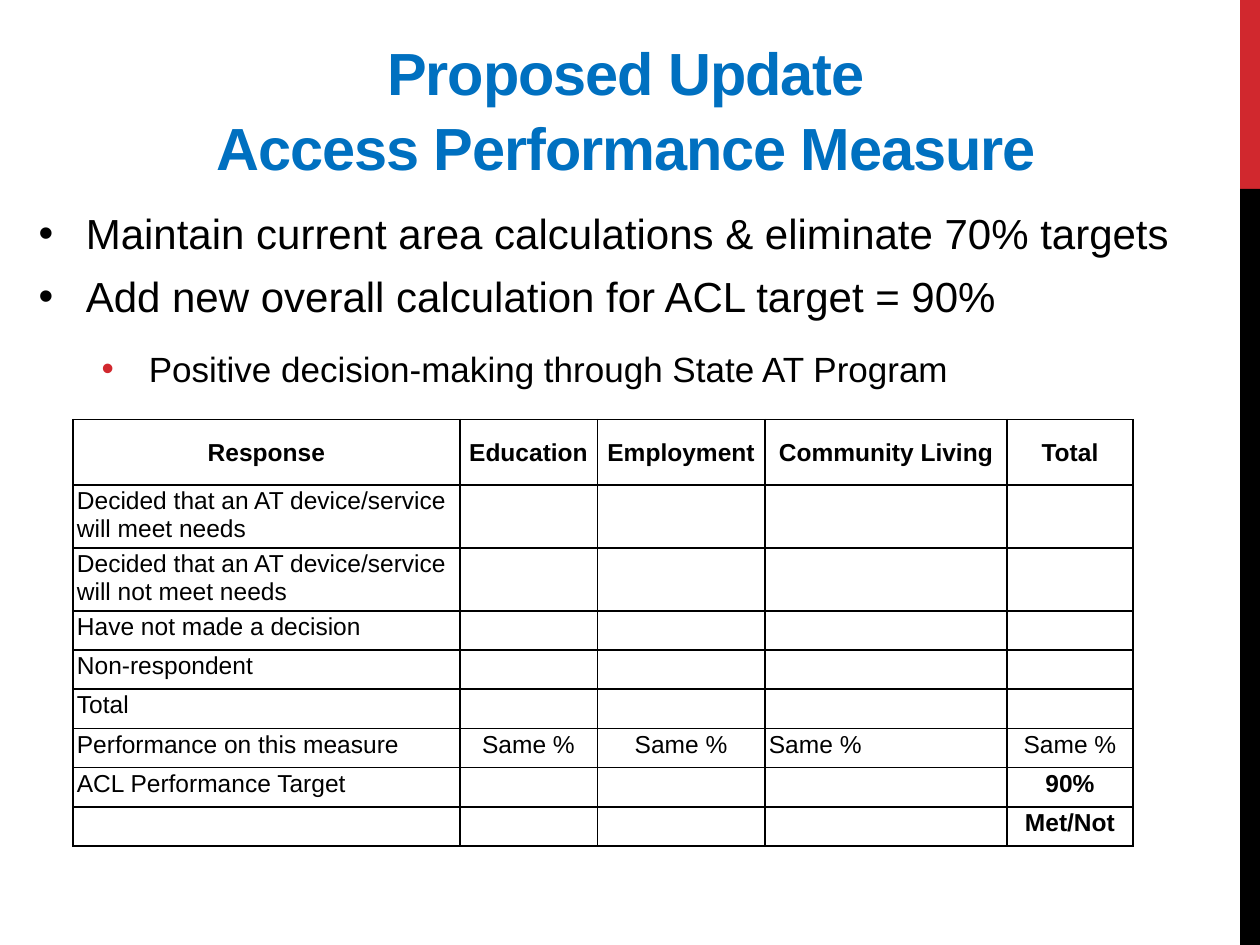
from dataclasses import dataclass
from typing import NamedTuple

from lxml.etree import SubElement
from pptx import Presentation
from pptx.dml.color import RGBColor
from pptx.enum.shapes import MSO_SHAPE
from pptx.enum.text import MSO_ANCHOR, MSO_AUTO_SIZE, PP_ALIGN
from pptx.oxml.ns import qn
from pptx.util import Cm, Pt


@dataclass(frozen=True)
class Theme:
    font: str = "Arial"
    title_color: str = "0070C0"
    text_color: str = "000000"
    accent: str = "D1282E"
    title_size: int = 34
    bullet_size: int = 24
    sub_bullet_size: int = 20
    table_size: int = 14
    line_spacing: float = 1.05


class Box(NamedTuple):
    """A region in centimetres."""
    left: float
    top: float
    width: float
    height: float

    def lengths(self):
        return [Cm(value) for value in self]


THEME = Theme()
TITLE_LINES = ["Proposed Update", "Access Performance Measure"]
BULLETS = [
    (0, "Maintain current area calculations & eliminate 70% targets"),
    (0, "Add new overall calculation for ACL target = 90%"),
    (1, "Positive decision-making through State AT Program"),
]
COLUMN_WIDTHS = [7.8, 2.77, 3.38, 4.88, 2.54]
ROW_HEIGHTS = [1.32] + [1.19] * 2 + [0.79] * 6
TABLE_ROWS = [
    ["Response", "Education", "Employment", "Community Living", "Total"],
    ["Decided that an AT device/service will meet needs"],
    ["Decided that an AT device/service will not meet needs"],
    ["Have not made a decision"],
    ["Non-respondent"],
    ["Total"],
    ["Performance on this measure"] + ["Same %"] * 4,
    ["ACL Performance Target", "", "", "", "90%"],
    ["", "", "", "", "Met/Not"],
]
BOLD_TOTALS = {"90%", "Met/Not"}
LEFT_ALIGNED = {(6, 3)}


def add_run(paragraph, text, size, color, bold=False):
    run = paragraph.add_run()
    run.text = text
    run.font.name = THEME.font
    run.font.size = Pt(size)
    run.font.bold = bold
    run.font.color.rgb = RGBColor.from_string(color)
    return run


def add_side_band(slide, box):
    """Red block over a black one, along the right edge."""
    red_height = box.height / 5
    parts = [
        (box.top, red_height, THEME.accent),
        (box.top + red_height, box.height - red_height, THEME.text_color),
    ]
    for top, height, color in parts:
        part = Box(box.left, top, box.width, height)
        shape = slide.shapes.add_shape(MSO_SHAPE.RECTANGLE, *part.lengths())
        shape.shadow.inherit = False
        shape.fill.solid()
        shape.fill.fore_color.rgb = RGBColor.from_string(color)
        shape.line.fill.background()


def set_title(slide, box):
    title = slide.shapes.title
    title.left, title.top, title.width, title.height = box.lengths()
    frame = title.text_frame
    frame.auto_size = MSO_AUTO_SIZE.NONE
    frame.vertical_anchor = MSO_ANCHOR.BOTTOM
    paragraph = frame.paragraphs[0]
    paragraph.alignment = PP_ALIGN.CENTER
    paragraph.line_spacing = THEME.line_spacing
    for index, line in enumerate(TITLE_LINES):
        if index:
            paragraph.add_line_break()
        run = add_run(paragraph, line, THEME.title_size, THEME.title_color, True)
        run.font._element.set("spc", "-60")


def set_bullet(paragraph, indent, hanging, color):
    properties = paragraph._p.get_or_add_pPr()
    properties.set("marL", str(Cm(indent)))
    properties.set("indent", str(-Cm(hanging)))
    bullet_color = SubElement(properties, qn("a:buClr"))
    SubElement(bullet_color, qn("a:srgbClr"), val=color)
    SubElement(properties, qn("a:buFont"), typeface=THEME.font)
    SubElement(properties, qn("a:buChar"), char="•")


def add_bullets(slide, box):
    frame = slide.shapes.add_textbox(*box.lengths()).text_frame
    frame.word_wrap = True
    for index, (level, text) in enumerate(BULLETS):
        paragraph = frame.add_paragraph() if index else frame.paragraphs[0]
        paragraph.level = level
        paragraph.line_spacing = THEME.line_spacing
        paragraph.space_before = Pt(8 * level)
        paragraph.space_after = Pt(6)
        set_bullet(paragraph, 0.95 + 1.27 * level, 0.95,
                   THEME.accent if level else THEME.text_color)
        size = THEME.sub_bullet_size if level else THEME.bullet_size
        add_run(paragraph, text, size, THEME.text_color)


def set_borders(cell):
    properties = cell._tc.get_or_add_tcPr()
    for side in ("lnL", "lnR", "lnT", "lnB"):
        line = SubElement(properties, qn(f"a:{side}"), w=str(Pt(1)))
        fill = SubElement(line, qn("a:solidFill"))
        SubElement(fill, qn("a:srgbClr"), val=THEME.text_color)


def fill_cell(cell, text, bold, alignment, anchor):
    cell.margin_left = cell.margin_right = Cm(0.08)
    cell.margin_top, cell.margin_bottom = Cm(0.05), Cm(0.03)
    cell.vertical_anchor = anchor
    set_borders(cell)
    cell.fill.background()
    paragraph = cell.text_frame.paragraphs[0]
    paragraph.alignment = alignment
    if text:
        add_run(paragraph, text, THEME.table_size, THEME.text_color, bold)
    else:
        ending = paragraph._p.get_or_add_endParaRPr()
        ending.set("sz", str(THEME.table_size * 100))


def add_response_table(slide, box):
    table = slide.shapes.add_table(
        len(ROW_HEIGHTS), len(COLUMN_WIDTHS), *box.lengths()).table
    table.first_row = table.horz_banding = False
    for column, width in zip(table.columns, COLUMN_WIDTHS):
        column.width = Cm(width)
    for row_index, (row, height) in enumerate(zip(table.rows, ROW_HEIGHTS)):
        row.height = Cm(height)
        texts = dict(enumerate(TABLE_ROWS[row_index]))
        header = row_index == 0
        for column_index, cell in enumerate(row.cells):
            text = texts.get(column_index, "")
            centred = header or (
                column_index > 0 and (row_index, column_index) not in LEFT_ALIGNED)
            fill_cell(cell, text, header or text in BOLD_TOTALS,
                      PP_ALIGN.CENTER if centred else PP_ALIGN.LEFT,
                      MSO_ANCHOR.MIDDLE if header else MSO_ANCHOR.TOP)


def main():
    presentation = Presentation()
    presentation.slide_width, presentation.slide_height = Cm(25.4), Cm(19.05)
    slide = presentation.slides.add_slide(presentation.slide_layouts[5])
    add_side_band(slide, Box(25, 0, 0.4, 19.05))
    set_title(slide, Box(0.43, 0.84, 24.38, 2.97))
    add_bullets(slide, Box(0.53, 4.01, 24.18, 4.06))
    add_response_table(
        slide, Box(1.47, 8.46, sum(COLUMN_WIDTHS), sum(ROW_HEIGHTS)))
    presentation.save("out.pptx")


if __name__ == "__main__":
    main()
